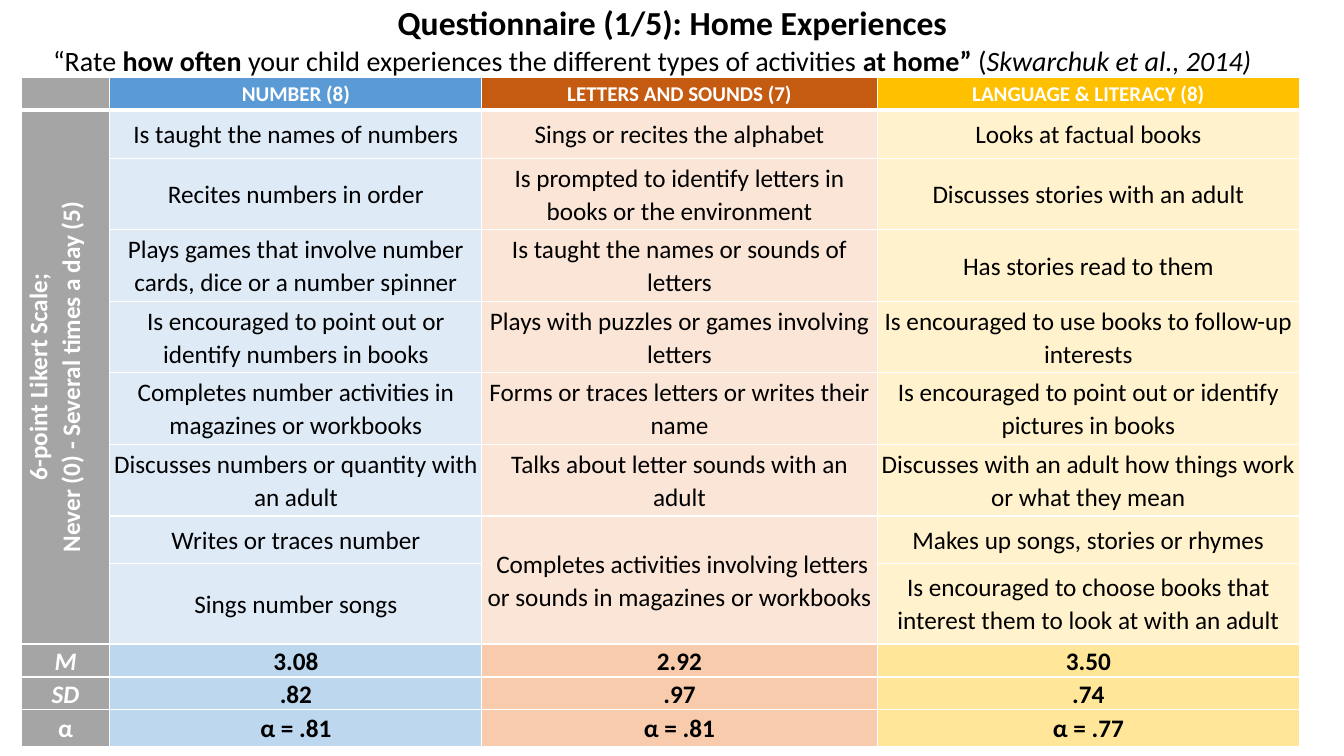
"""Build the slide of the home experiences questionnaire."""
from dataclasses import dataclass

from lxml import etree
from pptx import Presentation
from pptx.dml.color import RGBColor
from pptx.enum.text import MSO_ANCHOR, MSO_AUTO_SIZE, PP_ALIGN
from pptx.oxml.ns import qn
from pptx.util import Inches, Pt

CENTER = PP_ALIGN.CENTER
MIDDLE = MSO_ANCHOR.MIDDLE
TOP = MSO_ANCHOR.TOP
FIXED = MSO_AUTO_SIZE.NONE
FONT = "Calibri"
WHITE, BLACK, GREY = "FFFFFF", "000000", "A5A5A5"
WIDTHS = [0.88, 3.69, 3.92, 4.19]
HEIGHTS = [0.32, 0.48] + [0.71] * 5 + [0.47, 0.8, 0.32, 0.32, 0.36]
SCALE = "6-point Likert Scale;\nNever (0) - Several times a day (5)"
ITEMS = 8
LAST = ITEMS + 1


@dataclass
class Run:
    text: str
    bold: bool = False
    slant: bool = False


@dataclass
class Group:
    name: str
    tints: tuple[str, str, str]
    items: list[str]
    stats: list[str]
    after: int = 0


GROUPS = [
    Group("NUMBER (8)", ("5B9BD5", "DEEBF7", "BDD7EE"), [
        "Is taught the names of numbers",
        "Recites numbers in order",
        "Plays games that involve number cards, dice or a number spinner",
        "Is encouraged to point out or identify numbers in books",
        "Completes number activities in magazines or workbooks",
        "Discusses numbers or quantity with an adult",
        "Writes or traces number",
        "Sings number songs",
    ], ["3.08", ".82", "α = .81"]),
    Group("LETTERS AND SOUNDS (7)", ("C55A11", "FBE5D6", "F8CBAD"), [
        "Sings or recites the alphabet",
        "Is prompted to identify letters in books or the environment",
        "Is taught the names or sounds of letters",
        "Plays with puzzles or games involving letters",
        "Forms or traces letters or writes their name",
        "Talks about letter sounds with an adult",
        " Completes activities involving letters or sounds in magazines or workbooks",
    ], ["2.92", ".97", "α = .81"]),
    Group("LANGUAGE & LITERACY (8)", ("FFC000", "FFF2CC", "FFE699"), [
        "Looks at factual books",
        "Discusses stories with an adult",
        "Has stories read to them",
        "Is encouraged to use books to follow-up interests",
        "Is encouraged to point out or identify pictures in books",
        "Discusses with an adult how things work or what they mean",
        "Makes up songs, stories or rhymes",
        "Is encouraged to choose books that interest them to look at with an adult",
    ], ["3.50", ".74", "α = .77"], 8),
]
TITLE = [Run("Questionnaire (1/5): Home Experiences", True)]
PROMPT = [
    Run("“Rate "), Run("how often", True),
    Run(" your child experiences the different types of activities "),
    Run("at home” ", True), Run("("),
    Run("Skwarchuk et al., 2014)", slant=True),
]


def color(code: str) -> RGBColor:
    """Turn a hex string into a colour."""
    return RGBColor.from_string(code)


def write(para, runs: list[Run], size: float, ink: str, lead: float) -> None:
    """Fill a centred paragraph run by run."""
    para.alignment = CENTER
    para.line_spacing = lead
    for item in runs:
        run = para.add_run()
        run.text = item.text
        font = run.font
        font.name, font.size = FONT, Pt(size)
        font.bold, font.italic = item.bold, item.slant
        font.color.rgb = color(ink)


def place(shape, box: tuple, runs: list[Run], size: float, anchor):
    """Move a placeholder and write its one paragraph."""
    shape.left, shape.top, shape.width, shape.height = map(Inches, box)
    frame = shape.text_frame
    frame.word_wrap, frame.auto_size = True, FIXED
    frame.vertical_anchor = anchor
    para = frame.paragraphs[0]
    write(para, runs, size, BLACK, 0.9)
    return para


def edge(cell, row: int) -> None:
    """Rule a cell in white, thicker under the heading row."""
    props = cell._tc.get_or_add_tcPr()
    thick = {0: "lnB", 1: "lnT"}.get(row)
    for side in ("lnL", "lnR", "lnT", "lnB"):
        width = Pt(3 if side == thick else 1)
        line = etree.SubElement(props, qn(f"a:{side}"), w=str(width))
        fill = etree.SubElement(line, qn("a:solidFill"))
        etree.SubElement(fill, qn("a:srgbClr"), val=WHITE)


def paint(cell, fill: str, text: str, ink: str, size: float = 18,
          bold: bool = True, slant: bool = False, after: int = 0) -> None:
    """Colour a cell and write its lines."""
    cell.fill.solid()
    cell.fill.fore_color.rgb = color(fill)
    frame = cell.text_frame
    for num, line in enumerate(text.split("\n") if text else []):
        para = frame.add_paragraph() if num else frame.paragraphs[0]
        write(para, [Run(line, bold, slant)], size, ink, 1.07)
        para.space_after = Pt(after)


def build(slide) -> None:
    """Add the table of activities and scores."""
    box = map(Inches, (0.21, 0.77, sum(WIDTHS), sum(HEIGHTS)))
    grid = slide.shapes.add_table(len(HEIGHTS), len(WIDTHS), *box).table
    grid.first_row = grid.horz_banding = False
    for col, width in zip(grid.columns, WIDTHS):
        col.width = Inches(width)
    for row, height in enumerate(HEIGHTS):
        grid.rows[row].height = Inches(height)
        for cell in grid.rows[row].cells:
            cell.margin_left = cell.margin_right = 0
            cell.margin_top = cell.margin_bottom = 0
            cell.vertical_anchor = MIDDLE
            edge(cell, row)

    paint(grid.cell(0, 0), GREY, "", WHITE)
    side = grid.cell(1, 0)
    side.merge(grid.cell(ITEMS, 0))
    side._tc.get_or_add_tcPr().set("vert", "vert270")
    paint(side, GREY, SCALE, WHITE)
    for row, name in enumerate(("M", "SD", "α"), LAST):
        paint(grid.cell(row, 0), GREY, name, WHITE, slant=name != "α")

    for col, group in enumerate(GROUPS, 1):
        head, pale, mid = group.tints
        after = group.after
        paint(grid.cell(0, col), head, group.name, WHITE, 15, after=after)
        for row, text in enumerate(group.items, 1):
            paint(grid.cell(row, col), pale, text, BLACK, bold=False, after=after)
        count = len(group.items)
        if count < ITEMS:
            grid.cell(count, col).merge(grid.cell(ITEMS, col))
        for row, text in enumerate(group.stats, LAST):
            paint(grid.cell(row, col), mid, text, BLACK, after=after)


def main() -> None:
    """Make and save the deck."""
    deck = Presentation()
    deck.slide_width, deck.slide_height = Inches(13.33), Inches(7.5)
    slide = deck.slides.add_slide(deck.slide_layouts[1])
    place(slide.shapes.title, (0.92, 0, 11.5, 0.48), TITLE, 24, MIDDLE)
    para = place(slide.placeholders[1], (0.21, 0.42, 12.52, 0.35), PROMPT, 20, TOP)
    para.space_before = Pt(10)
    props = para._p.get_or_add_pPr()
    props.set("marL", "0")
    props.set("indent", "0")
    etree.SubElement(props, qn("a:buNone"))
    build(slide)
    deck.save("out.pptx")


if __name__ == "__main__":
    main()
